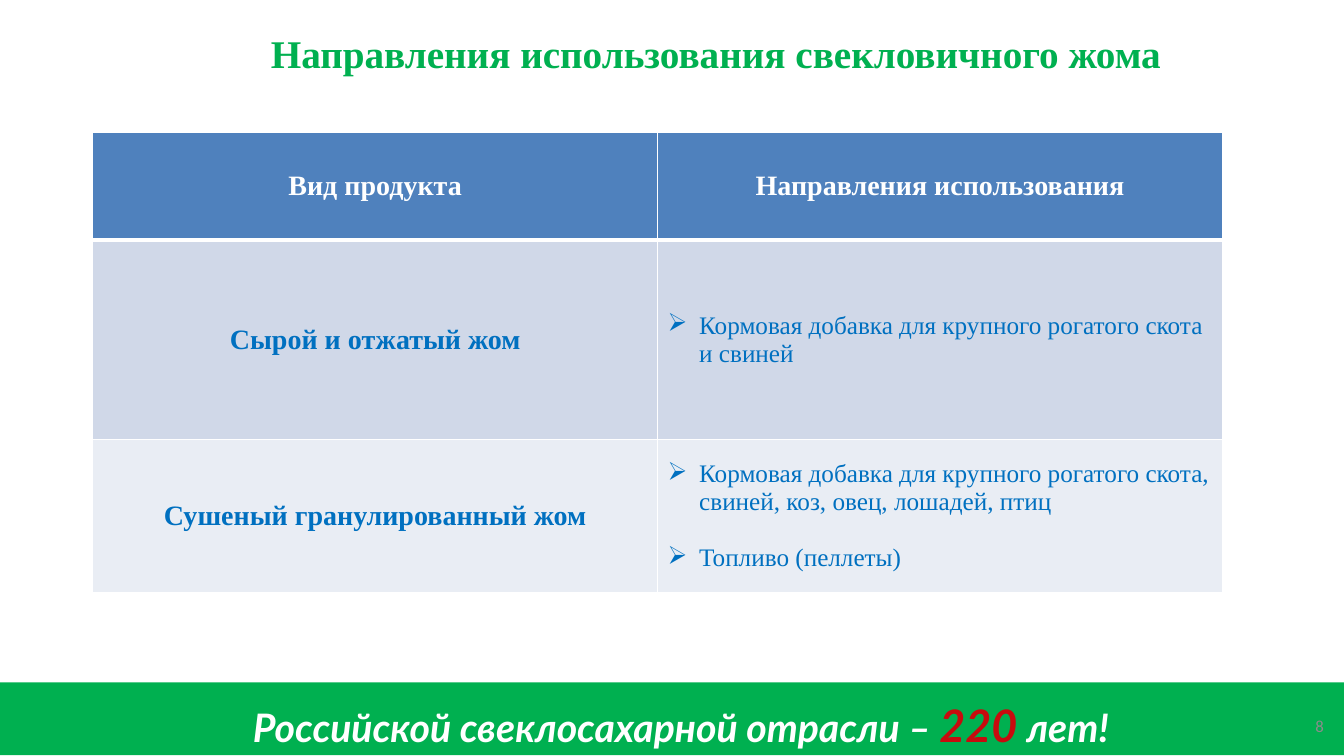
from dataclasses import dataclass
from typing import Any, NamedTuple

from lxml import etree
from pptx import Presentation
from pptx import util as u
from pptx.dml.color import RGBColor
from pptx.enum import shapes, text
from pptx.oxml import ns


@dataclass(frozen=True)
class Theme:
    green: str = "00B050"
    red: str = "C80B0E"
    white: str = "FFFFFF"
    black: str = "000000"
    blue: str = "0070C0"
    gray: str = "8C8C8C"
    head: str = "4F81BD"
    bands: tuple[str, ...] = ("D0D8E8", "E9EDF4")
    serif: str = "Times New Roman"
    sans: str = "Calibri"
    slogan: str = "Lato"
    large: float = 28
    accent: float = 32
    label: float = 20
    body: float = 18
    small: float = 12


class Box(NamedTuple):
    left: float
    top: float
    width: float
    height: float


class Product(NamedTuple):
    name: str
    uses: list[str]
    height: float


T = Theme()
MID = text.MSO_ANCHOR.MIDDLE
CENTER = text.PP_ALIGN.CENTER
WIDE, HIGH = 960, 540
BAND = 487.5
HEADS = ("Вид продукта", "Направления использования")
HEAD_H = 77
PRODUCTS = [
    Product("Сырой и отжатый жом",
            ["Кормовая добавка для крупного рогатого скота и свиней"], 142.5),
    Product("Сушеный гранулированный жом",
            ["Кормовая добавка для крупного рогатого скота, свиней, коз, овец, лошадей, птиц",
             "Топливо (пеллеты)"], 109.5),
]
GRID = Box(66.25, 94.5, 807, HEAD_H + sum(p.height for p in PRODUCTS))


def place(box: Box) -> list[u.Length]:
    return [u.Pt(side) for side in box]


def write(para: Any, words: str, *, size: float, color: str, font: str = T.serif,
          bold: bool = False, italic: bool = False) -> None:
    run = para.add_run()
    run.text = words
    face = run.font
    face.name, face.size = font, u.Pt(size)
    face.bold, face.italic = bold, italic
    face.color.rgb = RGBColor.from_string(color)


def add_box(slide: Any, box: Box, wrap: bool = True) -> Any:
    frame = slide.shapes.add_textbox(*place(box)).text_frame
    frame.word_wrap = wrap
    return frame


def add_title(slide: Any) -> None:
    frame = add_box(slide, Box(173.5, 8.75, 675.5, 58.25))
    frame.vertical_anchor = MID
    para = frame.paragraphs[0]
    para.alignment = CENTER
    write(para, "Направления использования свекловичного жома",
          size=T.large, color=T.green, bold=True)


def add_banner(slide: Any) -> None:
    bar = slide.shapes.add_shape(shapes.MSO_SHAPE.RECTANGLE,
                                 *place(Box(0, BAND, WIDE, 52)))
    bar.shadow.inherit = False
    bar.fill.solid()
    bar.fill.fore_color.rgb = RGBColor.from_string(T.green)
    bar.line.fill.background()

    frame = add_box(slide, Box(173.5, BAND, 665.25, 52), wrap=False)
    frame.auto_size = text.MSO_AUTO_SIZE.SHAPE_TO_FIT_TEXT
    para = frame.paragraphs[0]
    para.line_spacing = 1.2
    for words, size, color, bold in (
        ("Российской свеклосахарной отрасли – ", T.large, T.white, True),
        ("220", T.accent, T.red, True),
        (" ", T.large, T.black, False),
        ("лет!", T.large, T.white, True),
    ):
        write(para, words, size=size, color=color, font=T.slogan, bold=bold, italic=True)


def add_number(slide: Any) -> None:
    frame = add_box(slide, Box(728.75, 504, 224, 28.75))
    frame.vertical_anchor = MID
    para = frame.paragraphs[0]
    para.alignment = text.PP_ALIGN.RIGHT
    write(para, "8", size=T.small, color=T.gray, font=T.sans)


def style(cell: Any, fill: str, base: float = 1) -> None:
    """Set the white borders, then the fill; base is the bottom line's width."""
    props = cell._tc.get_or_add_tcPr()
    for side, width in (("L", 1), ("R", 1), ("T", 1), ("B", base)):
        line = etree.SubElement(props, ns.qn(f"a:ln{side}"), w=str(u.Pt(width)))
        solid = etree.SubElement(line, ns.qn("a:solidFill"))
        etree.SubElement(solid, ns.qn("a:srgbClr"), val=T.white)
    cell.fill.solid()
    cell.fill.fore_color.rgb = RGBColor.from_string(fill)
    cell.vertical_anchor = MID


def add_label(cell: Any, words: str, color: str) -> None:
    para = cell.text_frame.paragraphs[0]
    para.alignment = CENTER
    write(para, words, size=T.label, color=color, bold=True)


def add_list(cell: Any, items: list[str]) -> None:
    frame = cell.text_frame
    for pos, item in enumerate(items):
        para = frame.add_paragraph() if pos else frame.paragraphs[0]
        props = para._p.get_or_add_pPr()
        props.set("marL", str(u.Pt(22.5)))
        props.set("indent", str(u.Pt(-22.5)))
        etree.SubElement(props, ns.qn("a:buChar"), char="➢")
        if pos:
            para.space_before = u.Pt(20)
        write(para, item, size=T.body, color=T.blue)


def add_grid(slide: Any) -> None:
    table = slide.shapes.add_table(len(PRODUCTS) + 1, len(HEADS), *place(GRID)).table
    for col, head in enumerate(HEADS):
        table.columns[col].width = u.Pt(GRID.width / len(HEADS))
        cell = table.cell(0, col)
        style(cell, T.head, base=3)
        add_label(cell, head, T.white)
    table.rows[0].height = u.Pt(HEAD_H)
    for row, (item, fill) in enumerate(zip(PRODUCTS, T.bands), 1):
        table.rows[row].height = u.Pt(item.height)
        name, uses = table.cell(row, 0), table.cell(row, 1)
        style(name, fill)
        style(uses, fill)
        # The header's thick rule is shared with the row beneath it.
        if row == 1:
            for cell in (name, uses):
                cell._tc.tcPr.find(ns.qn("a:lnT")).set("w", str(u.Pt(3)))
        add_label(name, item.name, T.blue)
        add_list(uses, item.uses)


def main() -> None:
    deck = Presentation()
    deck.slide_width, deck.slide_height = u.Pt(WIDE), u.Pt(HIGH)
    slide = deck.slides.add_slide(deck.slide_layouts[6])
    add_title(slide)
    add_banner(slide)
    add_grid(slide)
    add_number(slide)
    deck.save("out.pptx")


if __name__ == "__main__":
    main()
